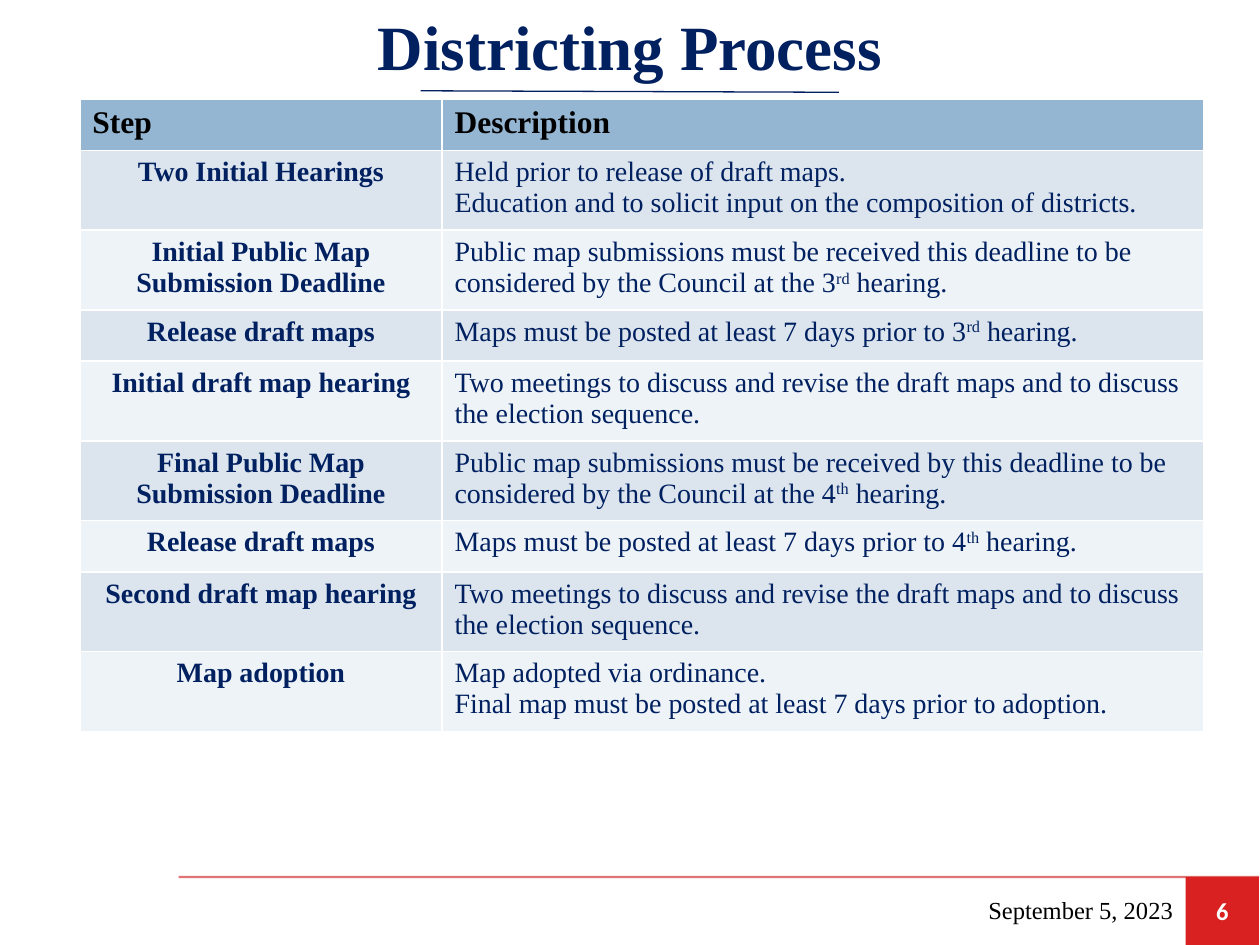
from lxml.etree import SubElement
from pptx import Presentation
from pptx.dml.color import RGBColor
from pptx.enum.shapes import MSO_CONNECTOR, MSO_SHAPE
from pptx.enum.text import MSO_ANCHOR, PP_ALIGN
from pptx.oxml.ns import qn
from pptx.util import Cm, Pt

NAVY = RGBColor(0x00, 0x20, 0x60)
BLACK = RGBColor(0x00, 0x00, 0x00)
WHITE = RGBColor(0xFF, 0xFF, 0xFF)
RED = RGBColor(0xD9, 0x21, 0x21)
RULE_RED = RGBColor(0xC8, 0x00, 0x00)
HEADER_BLUE = RGBColor(0x94, 0xB6, 0xD2)
BANDS = (RGBColor(0xDC, 0xE5, 0xEE), RGBColor(0xEE, 0xF3, 0xF7))
SERIF = "Times New Roman"

ROW_HEIGHT = Cm(1.03)
COLUMN_WIDTHS = (Cm(7.3), Cm(15.35))

# Each description is a list of paragraphs; each paragraph is a tuple of
# runs in which every second run is superscript.
DISCUSSION = [("Two meetings to discuss and revise the draft maps and to discuss "
               "the election sequence.",)]
STEPS = [
    ("Two Initial Hearings",
     [("Held prior to release of draft maps.",),
      ("Education and to solicit input on the composition of districts.",)]),
    ("Initial Public Map Submission Deadline",
     [("Public map submissions must be received this deadline to be considered "
       "by the Council at the 3", "rd", " hearing.")]),
    ("Release draft maps",
     [("Maps must be posted at least 7 days prior to 3", "rd", " hearing.")]),
    ("Initial draft map hearing", DISCUSSION),
    ("Final Public Map Submission Deadline",
     [("Public map submissions must be received by this deadline to be considered "
       "by the Council at the 4", "th", " hearing.")]),
    ("Release draft maps",
     [("Maps must be posted at least 7 days prior to 4", "th", " hearing.")]),
    ("Second draft map hearing", DISCUSSION),
    ("Map adoption",
     [("Map adopted via ordinance.",),
      ("Final map must be posted at least 7 days prior to adoption.",)]),
]


def write_text(frame, paragraphs, size, color, bold=False,
               align=PP_ALIGN.LEFT, font=SERIF):
    """Fill a text frame; every second run of a paragraph is superscript."""
    for number, runs in enumerate(paragraphs):
        paragraph = frame.add_paragraph() if number else frame.paragraphs[0]
        paragraph.alignment = align
        for position, text in enumerate(runs):
            run = paragraph.add_run()
            run.text = text
            run.font.name = font
            run.font.size = Pt(size)
            run.font.bold = bold
            run.font.color.rgb = color
            if position % 2:
                run._r.get_or_add_rPr().set("baseline", "30000")


def add_text_box(slide, left, top, width, height, text, size, color, **style):
    frame = slide.shapes.add_textbox(left, top, width, height).text_frame
    frame.word_wrap = True
    frame.vertical_anchor = MSO_ANCHOR.MIDDLE
    write_text(frame, [(text,)], size, color, **style)


def add_line(slide, start, end, color, width, opacity=100):
    line = slide.shapes.add_connector(MSO_CONNECTOR.STRAIGHT, *start, *end)
    line.line.color.rgb = color
    line.line.width = Pt(width)
    properties = line._element.spPr
    if opacity < 100:
        solid_color = next(properties.iter(qn("a:srgbClr")))
        SubElement(solid_color, qn("a:alpha")).set("val", str(opacity * 1000))
    SubElement(properties, qn("a:effectLst"))


def add_page_number(slide, number):
    shape = slide.shapes.add_shape(
        MSO_SHAPE.RECTANGLE, Cm(23.9), Cm(17.68), Cm(1.48), Cm(1.37))
    shape.shadow.inherit = False
    shape.fill.solid()
    shape.fill.fore_color.rgb = RED
    shape.line.fill.background()
    shape.text_frame.vertical_anchor = MSO_ANCHOR.MIDDLE
    write_text(shape.text_frame, [(number,)], 14, WHITE, bold=True,
               align=PP_ALIGN.CENTER, font="Calibri")


def fill_cell(cell, fill, paragraphs, size, color, **style):
    cell.fill.solid()
    cell.fill.fore_color.rgb = fill
    write_text(cell.text_frame, paragraphs, size, color, **style)


def add_steps_table(slide):
    row_count = len(STEPS) + 1
    table = slide.shapes.add_table(
        row_count, len(COLUMN_WIDTHS), Cm(1.61), Cm(2),
        sum(COLUMN_WIDTHS), ROW_HEIGHT * row_count).table
    for column, width in zip(table.columns, COLUMN_WIDTHS):
        column.width = width
    for row in table.rows:
        row.height = ROW_HEIGHT

    for column, heading in enumerate(("Step", "Description")):
        fill_cell(table.cell(0, column), HEADER_BLUE, [(heading,)], 18, BLACK,
                  bold=True)
    for row, (step, description) in enumerate(STEPS, start=1):
        band = BANDS[(row - 1) % 2]
        fill_cell(table.cell(row, 0), band, [(step,)], 16, NAVY,
                  bold=True, align=PP_ALIGN.CENTER)
        fill_cell(table.cell(row, 1), band, description, 16, NAVY)


def main():
    presentation = Presentation()
    presentation.slide_width = Cm(25.4)
    presentation.slide_height = Cm(19.05)
    slide = presentation.slides.add_slide(presentation.slide_layouts[6])

    add_line(slide, (Cm(3.6), Cm(17.68)), (Cm(25.38), Cm(17.68)),
             RULE_RED, 1.25, opacity=55)
    add_page_number(slide, "6")
    add_text_box(slide, Cm(0.95), Cm(0), Cm(23.5), Cm(1.83),
                 "Districting Process", 36, NAVY, bold=True,
                 align=PP_ALIGN.CENTER)
    add_line(slide, (Cm(8.48), Cm(1.83)), (Cm(16.91), Cm(1.86)), NAVY, 0.75)
    add_steps_table(slide)
    add_text_box(slide, Cm(16.48), Cm(17.82), Cm(7.42), Cm(1.02),
                 "September 5, 2023", 14, BLACK, align=PP_ALIGN.RIGHT)
    presentation.save("out.pptx")


if __name__ == "__main__":
    main()
